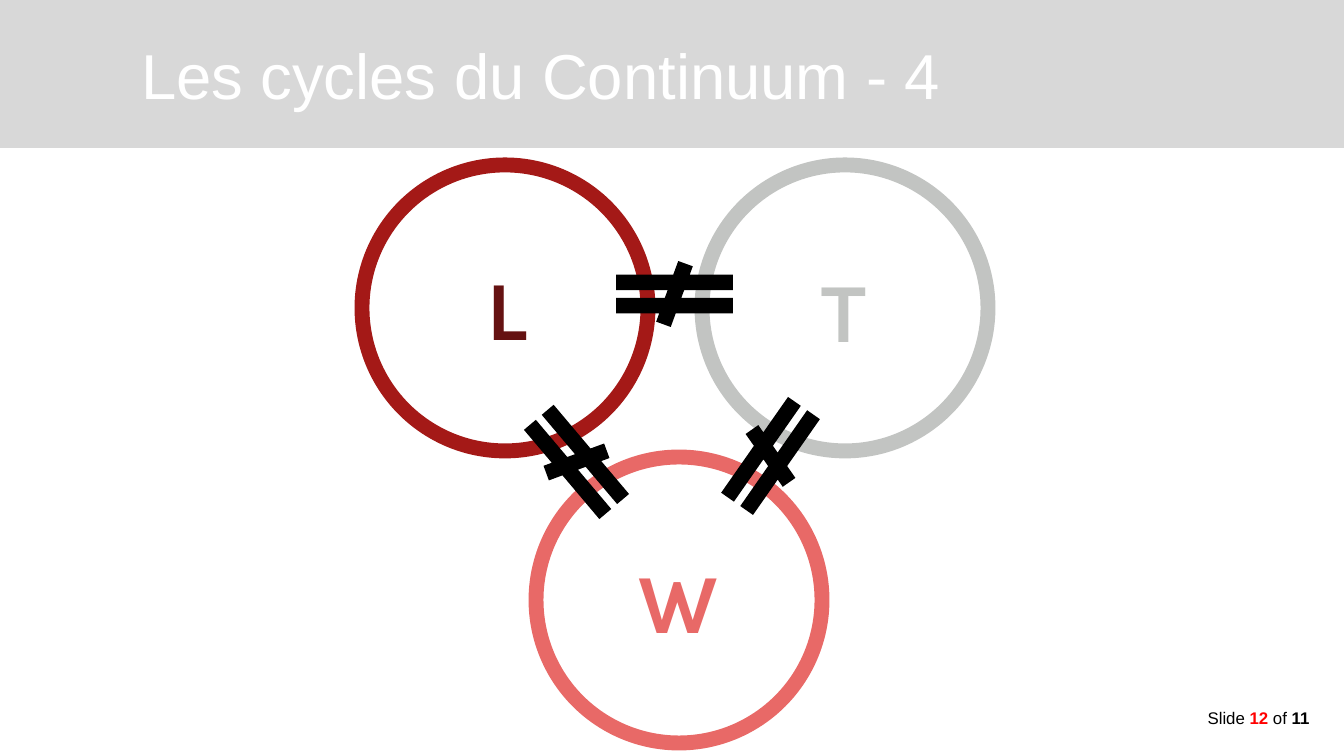
import pptx
import pptx.dml.color
import pptx.enum.shapes
import pptx.enum.text
import pptx.util

EMU_PER_PX = 914400 / 134.4
SHAPE = pptx.enum.shapes.MSO_SHAPE
ALIGN = pptx.enum.text.PP_ALIGN
ANCHOR = pptx.enum.text.MSO_ANCHOR

COLORS = {
    "band": "D8D8D8",
    "white": "FFFFFF",
    "black": "000000",
    "page_number": "FF0000",
    "l_ring": "A41917",
    "l_letter": "651212",
    "t": "C2C4C2",
    "w": "E86967",
}

RING_SIZE = 286
LETTER_SIZE = (99, 112)
SIGN_SIZE = (159, 66)

# letter, ring left/top, letter box left/top, ring colour, letter colour
CYCLES = [
    ("L", (362, 165), (458, 251), "l_ring", "l_letter"),
    ("T", (702, 165), (794, 253), "t", "t"),
    ("W", (536, 457), (629, 544), "w", "w"),
]

# left/top, rotation in degrees
SIGNS = [((497, 429), 49.8), ((595, 261), 0), ((691, 423), 124.9)]


def px(value):
    return pptx.util.Emu(round(value * EMU_PER_PX))


def rgb(name):
    return pptx.dml.color.RGBColor.from_string(COLORS[name])


def add_figure(page, kind, at, size, fill=None, line=None, rotation=0):
    figure = page.shapes.add_shape(kind, *map(px, (*at, *size)))
    figure.shadow.inherit = False
    figure.rotation = rotation
    if fill:
        figure.fill.solid()
        figure.fill.fore_color.rgb = rgb(fill)
    else:
        figure.fill.background()
    if line:
        figure.line.color.rgb = rgb(line)
        figure.line.width = pptx.util.Pt(8)
    else:
        figure.line.fill.background()


def add_text(page, at, size, spans, font, points, align, anchor=ANCHOR.MIDDLE, bold=None):
    """Add a one-paragraph box; spans are (text, colour, bold) and bold None follows the paragraph."""
    box = page.shapes.add_textbox(*map(px, (*at, *size)))
    frame = box.text_frame
    frame.word_wrap = True
    frame.vertical_anchor = anchor
    frame.margin_left = frame.margin_right = px(9)
    frame.margin_top = frame.margin_bottom = px(5)
    para = frame.paragraphs[0]
    para.alignment = align
    para.font.name = font
    para.font.size = pptx.util.Pt(points)
    para.font.bold = bold
    for text, color, span_bold in spans:
        span = para.add_run()
        span.text = text
        span.font.color.rgb = rgb(color)
        span.font.bold = span_bold


def main():
    deck = pptx.Presentation()
    deck.slide_width, deck.slide_height = px(1344), px(756)
    page = deck.slides.add_slide(deck.slide_layouts[6])

    add_figure(page, SHAPE.RECTANGLE, (0, 0), (1344, 148), fill="band")
    counter = [
        ("Slide ", "black", False),
        ("12", "page_number", True),
        (" of ", "black", False),
        ("11 ", "black", True),
    ]
    add_text(page, (1164, 703), (159, 31), counter, "Arial", 9, ALIGN.RIGHT, ANCHOR.TOP)
    add_text(page, (132, 0), (1074, 148), [("Les cycles du Continuum - 4", "white", None)],
             "Arial", 34, ALIGN.LEFT)

    for letter, ring_at, letter_at, ring_color, letter_color in CYCLES:
        add_figure(page, SHAPE.FLOWCHART_CONNECTOR, ring_at, (RING_SIZE, RING_SIZE), line=ring_color)
        add_text(page, letter_at, LETTER_SIZE, [(letter, letter_color, None)],
                 "Karla", 45, ALIGN.CENTER, bold=True)
    for at, rotation in SIGNS:
        add_figure(page, SHAPE.MATH_NOT_EQUAL, at, SIGN_SIZE, fill="black", rotation=rotation)

    deck.save("out.pptx")


if __name__ == "__main__":
    main()
